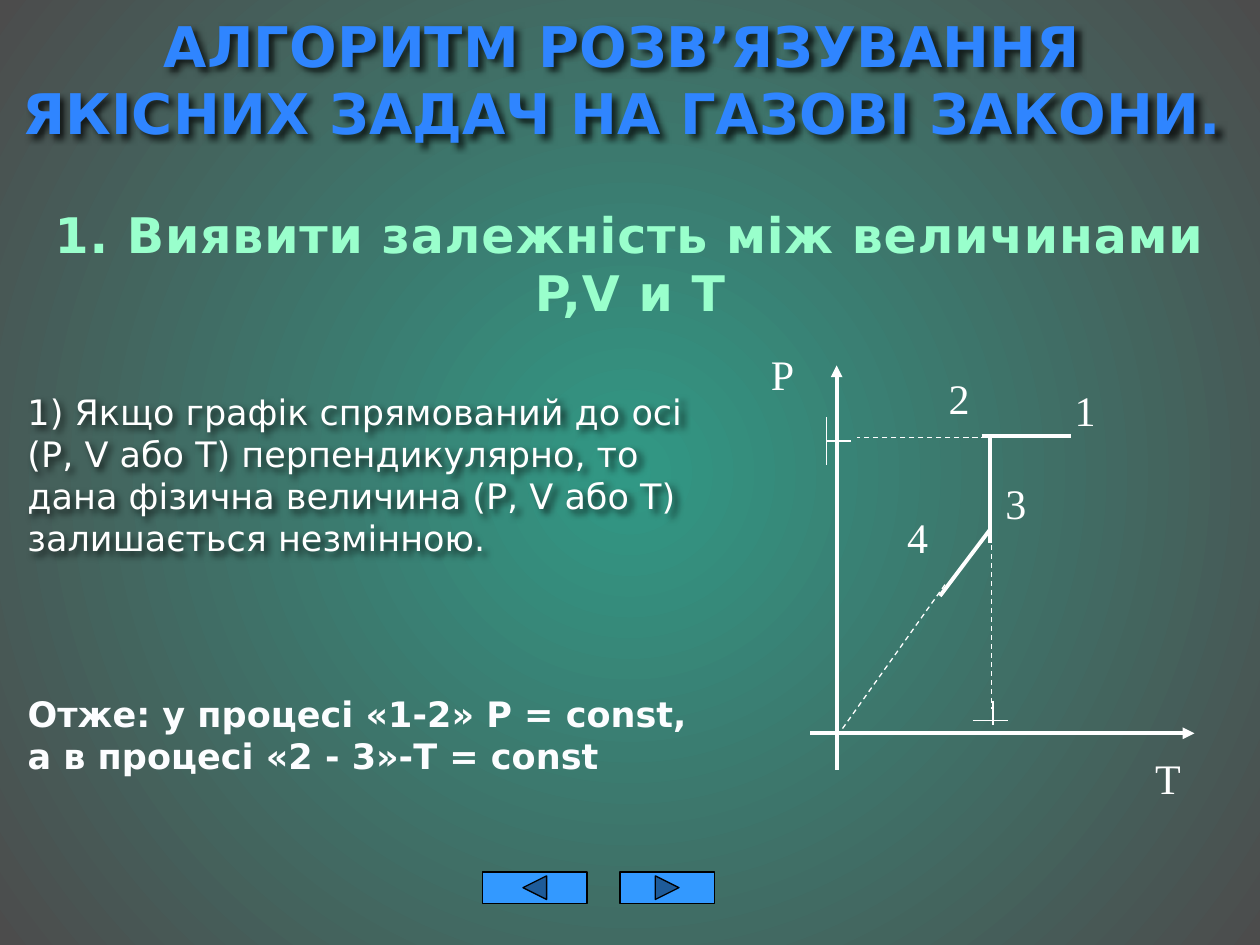
from lxml import etree
from pptx import Presentation
from pptx.dml.color import RGBColor
from pptx.enum.dml import MSO_LINE
from pptx.enum.shapes import MSO_CONNECTOR, MSO_SHAPE
from pptx.enum.text import MSO_ANCHOR, MSO_AUTO_SIZE, PP_ALIGN
from pptx.oxml import parse_xml
from pptx.oxml.ns import nsdecls, qn
from pptx.util import Inches, Pt

STRAIGHT = MSO_CONNECTOR.STRAIGHT
DASH = MSO_LINE.DASH
LEFT, CENTER = PP_ALIGN.LEFT, PP_ALIGN.CENTER
TOP = MSO_ANCHOR.TOP
GROW = MSO_AUTO_SIZE.SHAPE_TO_FIT_TEXT
BACK = MSO_SHAPE.ACTION_BUTTON_BACK_OR_PREVIOUS
FORWARD = MSO_SHAPE.ACTION_BUTTON_FORWARD_OR_NEXT
SANS, SERIF = "DejaVu Sans", "Times New Roman"
WHITE = "FFFFFF"
rgb = RGBColor.from_string

deck = Presentation()
deck.slide_width, deck.slide_height = Inches(10), Inches(7.5)
COL, ROW = deck.slide_width / 100, deck.slide_height / 75
slide = deck.slides.add_slide(deck.slide_layouts[1])
shapes = slide.shapes


def write(holder, box, text, size, color, font=SANS, bold=False, align=LEFT, shadow=False):
    x, y, w, h = box
    holder.left, holder.top = int(x * COL), int(y * ROW)
    holder.width, holder.height = int(w * COL), int(h * ROW)
    frame = holder.text_frame
    frame.text = text
    frame.word_wrap, frame.auto_size, frame.vertical_anchor = True, GROW, TOP
    paragraph = frame.paragraphs[0]
    paragraph.alignment, paragraph.space_before = align, Pt(0)
    props = paragraph._p.get_or_add_pPr()
    props.set("marL", "0")
    props.set("indent", "0")
    etree.SubElement(props, qn("a:buNone"))
    letters = paragraph.runs[0].font
    letters.name, letters.size, letters.bold = font, Pt(size), bold
    letters.color.rgb = rgb(color)
    if shadow:
        effects = etree.SubElement(holder.element.spPr, qn("a:effectLst"))
        effects.append(parse_xml(
            f'<a:outerShdw {nsdecls("a")} blurRad="50800" dist="38100" dir="2700000">'
            '<a:srgbClr val="000000"><a:alpha val="70000"/></a:srgbClr></a:outerShdw>'))
    return paragraph


def draw(start, end, weight, dash=None, arrow=False):
    stroke = shapes.add_connector(
        STRAIGHT, int(start[0] * COL), int(start[1] * ROW),
        int(end[0] * COL), int(end[1] * ROW))
    stroke.line.color.rgb = rgb(WHITE)
    stroke.line.width = Pt(weight)
    if dash:
        stroke.line.dash_style = dash
    if arrow:
        etree.SubElement(stroke.line._get_or_add_ln(), qn("a:tailEnd"), type="triangle")
    etree.SubElement(stroke.element.spPr, qn("a:effectLst"))


backdrop = slide.background.fill
backdrop.gradient()
for stop, color in zip(backdrop.gradient_stops, ("319885", "4C4C4C")):
    stop.color.rgb = rgb(color)
linear = next(slide.element.iter(qn("a:lin")))
linear.getparent().replace(linear, parse_xml(
    f'<a:path {nsdecls("a")} path="circle">'
    '<a:fillToRect l="50000" t="50000" r="50000" b="50000"/></a:path>'))

write(shapes.title, (0, 0.4, 98.8, 11.8),
      "АЛГОРИТМ РОЗВ’ЯЗУВАННЯ ЯКІСНИХ ЗАДАЧ НА ГАЗОВІ ЗАКОНИ.",
      32, "2F85FF", bold=True, align=CENTER, shadow=True)
step = write(slide.placeholders[1], (0, 15.7, 100, 10.4),
             "1. Виявити залежність між величинами P,V и T",
             28, "99FFCC", bold=True, align=CENTER)
step.runs[0].font._element.set("spc", "50")
write(shapes.add_textbox(0, 0, 0, 0), (1.2, 30.5, 58.3, 14.5),
      "1) Якщо графік спрямований до осі (P, V або T) перпендикулярно, "
      "то дана фізична величина (P, V або T) залишається незмінною.",
      20, WHITE, shadow=True)
write(shapes.add_textbox(0, 0, 0, 0), (1.2, 54.5, 55.1, 11.1),
      "Отже: у процесі «1-2» P = const, а в процесі «2 - 3»-T = const",
      20, "FCFDFF", bold=True)

for kind, x, width in ((BACK, 38.3, 8.3), (FORWARD, 49.2, 7.5)):
    button = shapes.add_shape(kind, int(x * COL), int(69.2 * ROW),
                              int(width * COL), int(2.5 * ROW))
    button.shadow.inherit = False
    button.fill.solid()
    button.fill.fore_color.rgb = rgb("3399FF")
    button.line.color.rgb = rgb("000000")
    button.line.width = Pt(0.75)

pressure_x, temperature_y = 66.4, 58.2
isotherm_x, isobar_y = 78.6, 34.6

draw((pressure_x, 61.1), (pressure_x, 29), 2.25, arrow=True)
draw((64.3, temperature_y), (94.8, temperature_y), 2.25, arrow=True)

processes = (
    ((74.6, 47.3), (isotherm_x, 42)),
    ((isotherm_x, 43.1), (isotherm_x, isobar_y)),
    ((77.9, isobar_y), (85, isobar_y)),
)
for start, end in processes:
    draw(start, end, 2.25)

axis_marks = (
    ((78.8, 55.6), (78.8, 57.5)),
    ((77.2, 57.2), (80, 57.2)),
    ((65.6, 33.1), (65.6, 36.9)),
    ((65.6, 35), (67.5, 35)),
)
for start, end in axis_marks:
    draw(start, end, 0.75)

projections = (
    ((78.3, 34.7), (68, 34.7)),
    ((78.7, 41.8), (78.7, 56.3)),
    ((75, 46.4), (66.6, temperature_y)),
)
for start, end in projections:
    draw(start, end, 0.75, dash=DASH)

labels = (
    ("T", 90.7, 59.2, 5.1), ("P", 60.2, 27.2, 5.1),
    ("1", 84.3, 30, 6.1), ("2", 74.3, 29.1, 6.1),
    ("3", 78.8, 37.4, 7.1), ("4", 71, 40.1, 4.1),
)
for label, x, y, width in labels:
    write(shapes.add_textbox(0, 0, 0, 0), (x, y, width, 5), label, 24, WHITE, font=SERIF)

deck.save("out.pptx")
